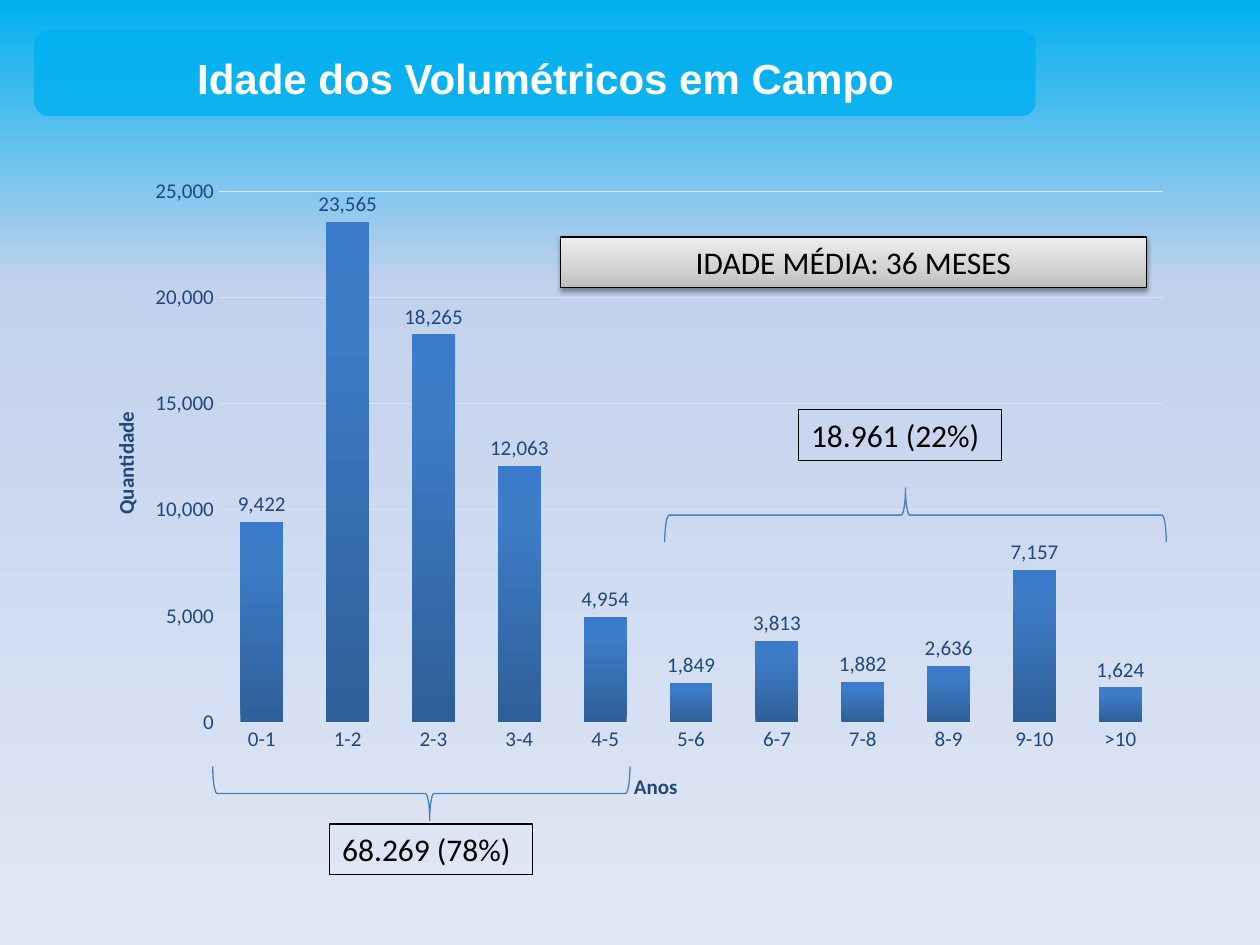
from lxml.etree import SubElement
from pptx import Presentation
from pptx.chart.data import CategoryChartData
from pptx.dml.color import RGBColor
from pptx.enum.chart import XL_CHART_TYPE as ChartType, XL_LABEL_POSITION as LabelPosition
from pptx.enum.chart import XL_TICK_MARK as TickMark
from pptx.enum.shapes import MSO_SHAPE as Shape
from pptx.enum.text import MSO_AUTO_SIZE as AutoSize, PP_ALIGN as Align
from pptx.oxml.ns import qn
from pptx.util import Cm, Pt

WHITE = RGBColor(0xFF, 0xFF, 0xFF)
BLACK = RGBColor(0x00, 0x00, 0x00)
SKY = RGBColor(0x00, 0xB0, 0xF0)
NAVY = RGBColor(0x1F, 0x49, 0x7D)
GRID = RGBColor(0xD4, 0xE3, 0xF4)
BRACE = RGBColor(0x4B, 0x7E, 0xBC)
BACKDROP = [(0, SKY), (30, RGBColor(0xC2, 0xD1, 0xED)), (100, RGBColor(0xE1, 0xE8, 0xF5))]
BAR = [(0, RGBColor(0x2F, 0x5F, 0x99)), (80, RGBColor(0x3D, 0x7C, 0xC7)),
       (100, RGBColor(0x3A, 0x7C, 0xCB))]
SILVER = [(0, RGBColor(0xBD, 0xBD, 0xBD)), (35, RGBColor(0xD1, 0xD1, 0xD1)),
          (100, RGBColor(0xEE, 0xEE, 0xEE))]
AGES = ["0-1", "1-2", "2-3", "3-4", "4-5", "5-6", "6-7", "7-8", "8-9", "9-10", ">10"]
AMOUNTS = [9422, 23565, 18265, 12063, 4954, 1849, 3813, 1882, 2636, 7157, 1624]
THOUSANDS = "#,##0"


def add_node(parent, tag, **attributes):
    """Append an XML element with the given attributes."""
    return SubElement(parent, qn(tag), {key: str(value) for key, value in attributes.items()})


def set_gradient(fill, element, stops, angle):
    """Give a fill the listed stops along a clockwise angle."""
    fill.gradient()
    node = next(element.iter(qn("a:gradFill")))
    for child in list(node):
        node.remove(child)
    stop_list = add_node(node, "a:gsLst")
    for position, color in stops:
        stop = add_node(stop_list, "a:gs", pos=position * 1000)
        add_node(stop, "a:srgbClr", val=color)
    add_node(node, "a:lin", ang=angle * 60000, scaled=0)


def set_font(font, size, color, name="Calibri", bold=False):
    """Set the look of a font."""
    font.name, font.size, font.bold = name, Pt(size), bold
    font.color.rgb = color


def write_text(frame, text, align=Align.LEFT, wrap=True, **style):
    """Write one formatted paragraph in a frame that fits its text."""
    frame.word_wrap = wrap
    frame.auto_size = AutoSize.SHAPE_TO_FIT_TEXT
    para = frame.paragraphs[0]
    para.alignment = align
    span = para.add_run()
    span.text = text
    set_font(span.font, **style)


def add_plain_shape(slide, kind, place, line=None):
    """Add an unfilled shape without shadow, outlined when a colour is given."""
    box = slide.shapes.add_shape(kind, *map(Cm, place))
    box.shadow.inherit = False
    box.fill.background()
    if line is None:
        box.line.fill.background()
    else:
        box.line.color.rgb = line
        box.line.width = Pt(0.75)
    return box


def add_banner(slide):
    """Add the translucent title band and its heading."""
    band = add_plain_shape(slide, Shape.ROUNDED_RECTANGLE, (0.69, 0.61, 20.19, 1.73))
    band.fill.solid()
    band.fill.fore_color.rgb = SKY
    add_node(next(band._element.spPr.iter(qn("a:srgbClr"))), "a:alpha", val=80000)
    heading = slide.shapes.add_textbox(*map(Cm, (0.89, 0.94, 20.22, 1.27)))
    write_text(heading.text_frame, "Idade dos Volumétricos em Campo", align=Align.CENTER,
               size=24, color=WHITE, name="Arial", bold=True)


def place_part(layout, **position):
    """Fix a chart part at fractions of the chart area."""
    manual = add_node(layout, "c:manualLayout")
    if "w" in position:
        add_node(manual, "c:layoutTarget", val="inner")
    for key in ("xMode", "yMode"):
        add_node(manual, f"c:{key}", val="edge")
    for key, value in position.items():
        add_node(manual, f"c:{key}", val=value)


def format_axis(axis, title, x, y):
    """Style an axis and place its title."""
    axis.major_tick_mark = axis.minor_tick_mark = TickMark.NONE
    set_font(axis.tick_labels.font, 12, NAVY)
    frame = axis.axis_title.text_frame
    frame.text = title
    set_font(frame.paragraphs[0].runs[0].font, 12, NAVY, bold=True)
    node = axis.axis_title._element
    layout = node.find(qn("c:layout"))
    if layout is None:
        layout = add_node(node, "c:layout")
        node.find(qn("c:tx")).addnext(layout)
    place_part(layout, x=x, y=y)


def add_age_chart(slide):
    """Add the column chart of amounts by age."""
    data = CategoryChartData(number_format=THOUSANDS)
    data.categories = AGES
    data.add_series("Series 1", AMOUNTS)
    place = map(Cm, (1.5, 3.33, 22.4, 13.21))
    chart = slide.shapes.add_chart(ChartType.COLUMN_CLUSTERED, *place, data).chart
    chart.has_legend = chart.has_title = False
    set_font(chart.font, 10, BLACK)

    ages, amounts = chart.category_axis, chart.value_axis
    format_axis(ages, "Anos", 0.5, 0.92)
    ages.format.line.color.rgb = GRID
    ages.format.line.width = Pt(0.75)
    format_axis(amounts, "Quantidade", 0.03, 0.37)
    amounts.format.line.fill.background()
    amounts.minimum_scale, amounts.maximum_scale, amounts.major_unit = 0, 25000, 5000
    amounts.tick_labels.number_format = THOUSANDS
    amounts.tick_labels.number_format_is_linked = False
    amounts.major_gridlines.format.line.color.rgb = GRID
    amounts.major_gridlines.format.line.width = Pt(0.75)

    plot = chart.plots[0]
    plot.gap_width, plot.overlap, plot.vary_by_categories = 100, -24, False
    series = plot.series[0]
    set_gradient(series.format.fill, series._element, BAR, 270)
    labels = series.data_labels
    labels.show_value = True
    labels.position = LabelPosition.OUTSIDE_END
    labels.number_format = THOUSANDS
    labels.number_format_is_linked = False
    set_font(labels.font, 12, NAVY)

    area = next(chart._chartSpace.iter(qn("c:plotArea")))
    layout = area.find(qn("c:layout"))
    if layout is None:
        layout = add_node(area, "c:layout")
        area.insert(0, layout)
    place_part(layout, x=0.13, y=0.04, w=0.85, h=0.81)


def add_average(slide):
    """Add the shaded box with the average age."""
    box = add_plain_shape(slide, Shape.RECTANGLE, (11.3, 4.78, 11.81, 1.02), BLACK)
    set_gradient(box.fill, box._element, SILVER, 270)
    effects = box._element.spPr.find(qn("a:effectLst"))
    shadow = add_node(effects, "a:outerShdw", blurRad=Pt(3.1), dist=Pt(1.6),
                      dir=5400000, rotWithShape=0)
    add_node(add_node(shadow, "a:srgbClr", val=BLACK), "a:alpha", val=38000)
    write_text(box.text_frame, "IDADE MÉDIA: 36 MESES", align=Align.CENTER,
               size=18, color=BLACK)


def add_group_total(slide, text, left, top, brace_place, rotation):
    """Add a brace over a group of ages and the box with its total."""
    brace = add_plain_shape(slide, Shape.LEFT_BRACE, brace_place, BRACE)
    brace.rotation = rotation
    brace.adjustments[0], brace.adjustments[1] = 0.08, 0.52
    box = add_plain_shape(slide, Shape.RECTANGLE, (left, top, 4.09, 1.02), BLACK)
    write_text(box.text_frame, text, wrap=False, size=18, color=BLACK)


def main():
    """Build the slide and save the deck."""
    deck = Presentation()
    deck.slide_width, deck.slide_height = Cm(25.4), Cm(19.05)
    page = deck.slides.add_slide(deck.slide_layouts[6])
    set_gradient(page.background.fill, page._element, BACKDROP, 90)
    add_banner(page)
    add_age_chart(page)
    add_average(page)
    add_group_total(page, "68.269 (78%)", 6.65, 16.61, (7.95, 11.79, 1.09, 8.41), 270)
    add_group_total(page, "18.961 (22%)", 16.1, 8.26, (17.91, 5.33, 1.09, 10.11), 90)
    deck.save("out.pptx")


if __name__ == "__main__":
    main()
